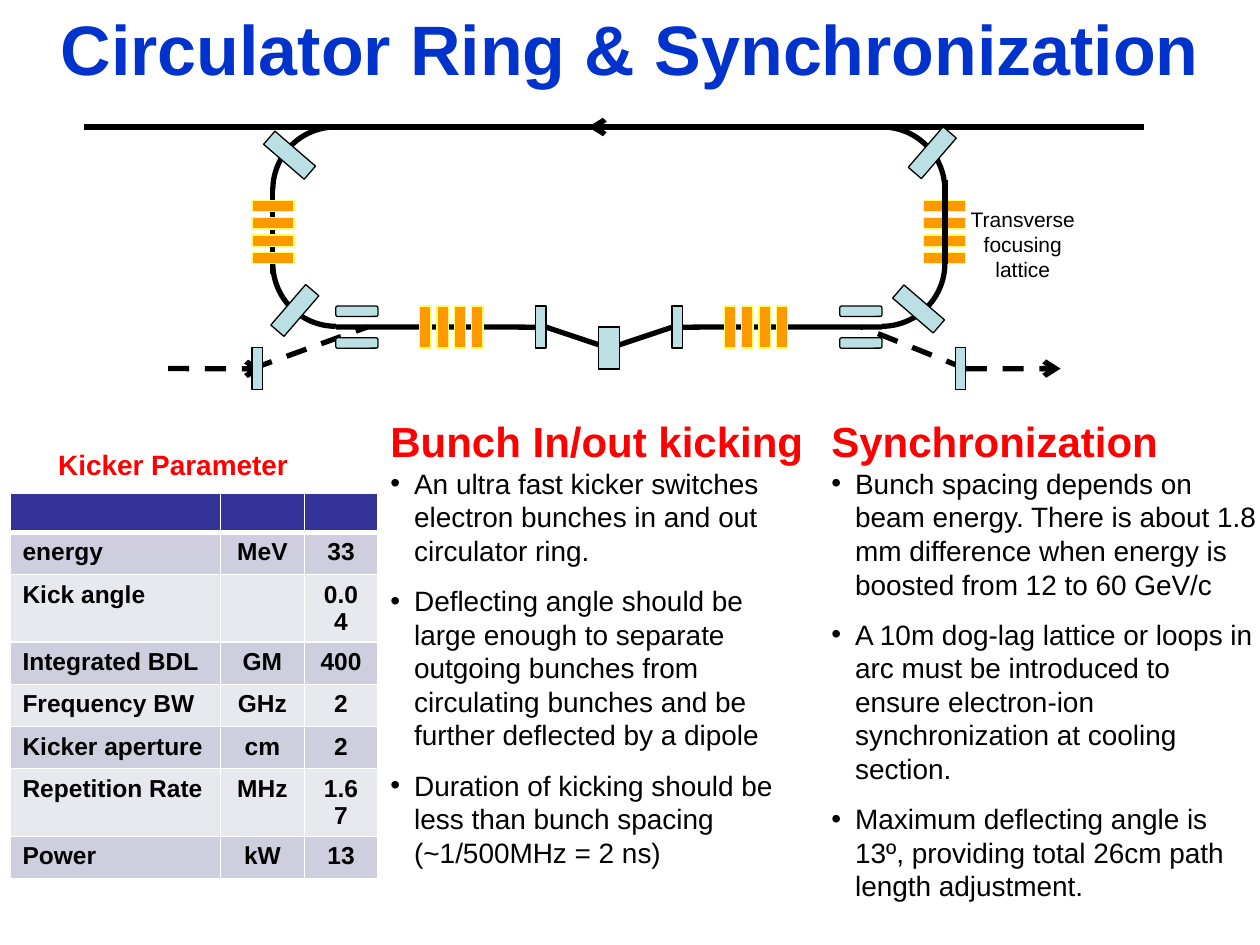
"""Build the slide on the circulator ring and its synchronization."""
from typing import NamedTuple, Optional

from pptx import Presentation
from pptx.dml.color import RGBColor
from pptx.enum.dml import MSO_LINE
from pptx.enum.shapes import MSO_CONNECTOR, MSO_SHAPE
from pptx.enum.text import MSO_ANCHOR, MSO_AUTO_SIZE, PP_ALIGN
from pptx.oxml.ns import qn
from pptx.util import Cm, Pt
from lxml.etree import SubElement

BLACK, WHITE, RED, BLUE = "000000", "FFFFFF", "FF0000", "0033CC"
STEEL, AMBER, LEMON = "BBE0E3", "FF9900", "FFFF66"
NAVY, DARK, LIGHT = "333399", "CECEDE", "E8E8EF"
TOP, BASE, PORT = 2.56, 6.59, 7.43
LEFT, RIGHT = 5.5, 19.05


class Join(NamedTuple):
    """Name of a plate and the side where a line meets it."""
    name: str
    side: int


class Line(NamedTuple):
    """A straight beam path."""
    x1: float
    y1: float
    x2: float
    y2: float
    dash: bool = False
    arrow: bool = False
    start: Optional[Join] = None
    end: Optional[Join] = None


class Plate(NamedTuple):
    """A filled magnet, kicker or lattice bar."""
    x: float
    y: float
    w: float
    h: float
    turn: float = 0
    kind: int = MSO_SHAPE.RECTANGLE
    fill: str = STEEL
    edge: str = BLACK


class Style(NamedTuple):
    """Look of a paragraph."""
    size: float
    color: str = BLACK
    bold: bool = False
    align: int = PP_ALIGN.LEFT


PATHS = [
    Line(1.7, TOP, 23.07, TOP),
    Line(13.97, TOP, 11.86, TOP, arrow=True),
    Line(6.77, BASE, 11.01, BASE, end=Join("west", 3)),
    Line(13.55, BASE, 17.78, BASE, start=Join("east", 1)),
    Line(12.28, 7.02, 11.01, BASE, end=Join("west", 3)),
    Line(12.28, 7.02, 13.55, BASE, end=Join("east", 1)),
    Line(5.08, PORT, 7.41, BASE, dash=True, start=Join("in", 1)),
    Line(3.39, PORT, 5.29, PORT, True, True, end=Join("in", 3)),
    Line(19.47, PORT, 17.36, BASE, dash=True, start=Join("out", 3)),
    Line(19.47, PORT, 21.38, PORT, True, True, start=Join("out", 3)),
    Line(LEFT, 3.84, LEFT, 5.53),
]
DIPOLES = {
    "west": Plate(10.8, 6.17, 0.21, 0.85),
    "east": Plate(13.55, 6.17, 0.21, 0.85),
    "in": Plate(5.08, 7.01, 0.21, 0.85),
    "out": Plate(19.26, 7.01, 0.21, 0.85),
    "mid": Plate(12.07, BASE, 0.42, 0.85),
}
BENDS = [(18.62, 2.54, 40.7), (5.66, 2.59, 130.7),
         (5.77, 5.72, 40.7), (18.34, 5.69, 130.7)]
ROWS = [
    ("", "", ""),
    ("energy", "MeV", "33"),
    ("Kick angle", "", "0.04"),
    ("Integrated BDL", "GM", "400"),
    ("Frequency BW", "GHz", "2"),
    ("Kicker aperture", "cm", "2"),
    ("Repetition Rate", "MHz", "1.67"),
    ("Power", "kW", "13"),
]
KICKS = [
    "An ultra fast kicker switches electron bunches in and out circulator ring.",
    "Deflecting angle should be large enough to separate outgoing bunches from "
    "circulating bunches and be further deflected by a dipole",
    "Duration of kicking should be less than bunch spacing (~1/500MHz = 2 ns)",
]
SYNCS = [
    "Bunch spacing depends on beam energy. There is about 1.8 mm difference "
    "when energy is boosted from 12 to 60 GeV/c",
    "A 10m dog-lag lattice or loops in arc must be introduced to ensure "
    "electron-ion synchronization at cooling section.",
    "Maximum deflecting angle is 13º, providing total 26cm path length adjustment.",
]


def tint(fmt, color: str) -> None:
    fmt.solid()
    fmt.fore_color.rgb = RGBColor.from_string(color)


def style(para, look: Style) -> None:
    para.alignment = look.align
    font = para.font
    font.name, font.size, font.bold = "Arial", Pt(look.size), look.bold
    tint(font.fill, look.color)


def draw_line(slide, path: Line):
    ends = [Cm(v) for v in path[:4]]
    line = slide.shapes.add_connector(MSO_CONNECTOR.STRAIGHT, *ends)
    line.line.width = Pt(3)
    tint(line.line.fill, BLACK)
    if path.dash:
        line.line.dash_style = MSO_LINE.DASH
    if path.arrow:
        SubElement(line.line._get_or_add_ln(), qn("a:tailEnd"), type="arrow")
    SubElement(line._element.spPr, qn("a:effectLst"))
    return line


def draw_plate(slide, plate: Plate):
    box = [Cm(v) for v in plate[:4]]
    shape = slide.shapes.add_shape(plate.kind, *box)
    shape.shadow.inherit = False
    shape.rotation = plate.turn
    shape.line.width = Pt(0.75)
    tint(shape.fill, plate.fill)
    tint(shape.line.fill, plate.edge)
    return shape


def draw_arc(slide, x: float, y: float, **flips: str) -> None:
    arc = slide.shapes.add_shape(MSO_SHAPE.ARC, Cm(x), Cm(y), Cm(2.54), Cm(2.54))
    arc.shadow.inherit = False
    arc.fill.background()
    arc.line.width = Pt(3)
    tint(arc.line.fill, BLACK)
    for key, value in flips.items():
        arc._element.spPr.xfrm.set(key, value)


def draw_bars(slide, x: float, y: float, tall: bool) -> None:
    for i in range(4):
        step = 0.35 * i
        spot = (x + step, y, 0.23, 0.85) if tall else (x, y + step, 0.85, 0.23)
        draw_plate(slide, Plate(*spot, fill=AMBER, edge=LEMON))


def draw_ring(slide) -> None:
    for x, side in ((16.51, {}), (LEFT, {"flipH": "1"})):
        draw_arc(slide, x, TOP, **side)
        draw_arc(slide, x, 4.04, flipV="1", **side)
    lines = [draw_line(slide, path) for path in PATHS]
    plates = {name: draw_plate(slide, plate) for name, plate in DIPOLES.items()}
    for path, line in zip(PATHS, lines):
        if path.start:
            line.begin_connect(plates[path.start.name], path.start.side)
        if path.end:
            line.end_connect(plates[path.end.name], path.end.side)
    for x in (6.77, 16.93):
        for y in (6.17, 6.81):
            draw_plate(slide, Plate(x, y, 0.85, 0.21, kind=MSO_SHAPE.ROUNDED_RECTANGLE))
    for x, tall in ((5.08, False), (18.62, False), (8.46, True), (14.6, True)):
        draw_bars(slide, x, 6.17 if tall else 4.04, tall)
    draw_line(slide, Line(RIGHT, 3.62, RIGHT, 5.32))
    for x, y, turn in BENDS:
        draw_plate(slide, Plate(x, y, 0.35, 1.08, turn))


def add_text(slide, x: float, y: float, w: float, h: float, text: str, look: Style):
    frame = slide.shapes.add_textbox(Cm(x), Cm(y), Cm(w), Cm(h)).text_frame
    frame.word_wrap = True
    frame.auto_size = MSO_AUTO_SIZE.NONE
    frame.text = text
    style(frame.paragraphs[0], look)
    return frame


def add_list(slide, x: float, w: float, h: float, head: str, items: list) -> None:
    frame = add_text(slide, x, 8.26, w, h, head, Style(24, RED, True))
    for i, item in enumerate(items):
        para = frame.add_paragraph()
        para.text = item
        props = para._p.get_or_add_pPr()
        props.set("marL", str(Cm(0.48)))
        props.set("indent", str(-Cm(0.48)))
        para.space_before = Pt(9.5 if i else 0)
        SubElement(props, qn("a:buFont"), typeface="Arial")
        SubElement(props, qn("a:buChar"), char="•")
        style(para, Style(16))


def fill_cell(cell, text: str, row: int, col: int) -> None:
    props = cell._tc.get_or_add_tcPr()
    for side in "LRTB":
        thick = (row, side) in ((0, "B"), (1, "T"))
        edge = SubElement(props, qn(f"a:ln{side}"), w=str(Pt(3 if thick else 1)))
        SubElement(SubElement(edge, qn("a:solidFill")), qn("a:srgbClr"), val=WHITE)
    tint(cell.fill, (DARK if row % 2 else LIGHT) if row else NAVY)
    if text:
        cell.text = text
    else:
        cell.margin_top = cell.margin_bottom = 0
    align = PP_ALIGN.CENTER if col else PP_ALIGN.LEFT
    style(cell.text_frame.paragraphs[0], Style(14, BLACK, True, align))


def add_grid(slide) -> None:
    frame = slide.shapes.add_table(len(ROWS), 3, Cm(0.2), Cm(9.95), Cm(7.41), Cm(6.73))
    grid = frame.table
    for col, width in zip(grid.columns, (4.24, 1.7, 1.47)):
        col.width = Cm(width)
    for r, texts in enumerate(ROWS):
        grid.rows[r].height = Cm(0.85 if r else 0.78)
        for c, text in enumerate(texts):
            fill_cell(grid.cell(r, c), text, r, c)


def main() -> None:
    deck = Presentation()
    deck.slide_width, deck.slide_height = Cm(25.4), Cm(19.05)
    slide = deck.slides.add_slide(deck.slide_layouts[6])
    mid = PP_ALIGN.CENTER
    title = add_text(slide, 0, 0, 25.4, 1.9, "Circulator Ring & Synchronization",
                     Style(40, BLUE, True, mid))
    title.vertical_anchor = MSO_ANCHOR.MIDDLE
    draw_ring(slide)
    add_text(slide, 19.25, 4.04, 2.74, 1.8, "Transverse focusing lattice",
             Style(12, align=mid))
    add_list(slide, 16.51, 9.09, 10.19, "Synchronization", SYNCS)
    add_list(slide, 7.62, 8.89, 9.5, "Bunch In/out kicking", KICKS)
    add_grid(slide)
    add_text(slide, 0.63, 8.89, 5.72, 0.94, "Kicker Parameter", Style(16, RED, True, mid))
    deck.save("out.pptx")


if __name__ == "__main__":
    main()
